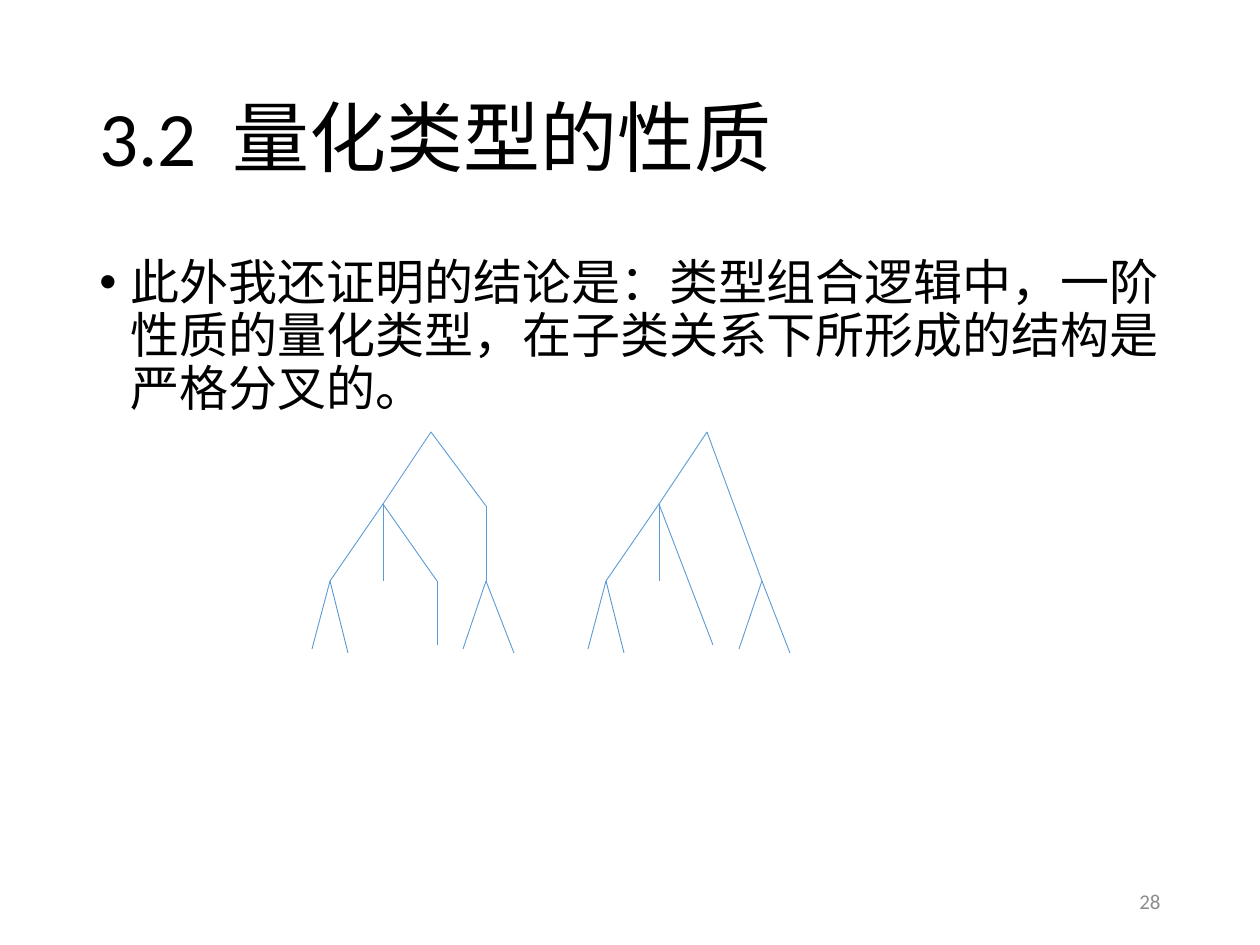
import pptx
import pptx.dml.color
import pptx.enum.shapes
import pptx.enum.text
import pptx.oxml.ns
import pptx.util
from lxml import etree

PX = 914400 / 126
FONT = "Calibri"

# Node positions shared by both trees, in px from the tree's top left corner
NODES = {
    "root": (119, 0),
    "branch": (71, 72), "elbow": (174, 74),
    "left": (18, 149), "middle": (71, 149), "inner": (125, 149), "right": (174, 149),
    "left leaf 1": (0, 217), "left leaf 2": (36, 221), "inner leaf": (125, 213),
    "right leaf 1": (151, 217), "right leaf 2": (202, 221),
}
SHARED_PATHS = [
    ("root", "branch"), ("branch", "left"), ("branch", "middle"),
    ("left", "left leaf 1"), ("left", "left leaf 2"),
    ("right", "right leaf 1"), ("right", "right leaf 2"),
]
BENT_PATHS = [("root", "elbow", "right"), ("branch", "inner", "inner leaf")]
STRAIGHT_PATHS = [(path[0], path[-1]) for path in BENT_PATHS]


def px(value):
    return pptx.util.Emu(round(value * PX))


def color(value):
    return pptx.dml.color.RGBColor.from_string(value)


def place(shape, box):
    shape.left, shape.top, shape.width, shape.height = map(px, box)


def style(paragraph, size, fill):
    paragraph.font.size = pptx.util.Pt(size)
    paragraph.font.name = FONT
    paragraph.font.color.rgb = color(fill)


def add_title(slide, box, number, heading):
    title = slide.shapes.title
    place(title, box)
    title.text_frame.word_wrap = True
    title.text_frame.vertical_anchor = pptx.enum.text.MSO_ANCHOR.MIDDLE
    line = title.text_frame.paragraphs[0]
    line.alignment = pptx.enum.text.PP_ALIGN.LEFT
    line.line_spacing = 0.9
    for text in (number, " ", heading):
        run = line.add_run()
        run.text = text
        if text == " ":
            run.font._element.set("spc", "1000")  # widens the gap after the number
    style(line, 44, "000000")


def add_text(slide, box, text):
    frame = slide.shapes.add_textbox(*map(px, box)).text_frame
    frame.word_wrap = True
    paragraph = frame.paragraphs[0]
    paragraph.text = text
    return frame, paragraph


def add_conclusion(slide, box, text):
    _, paragraph = add_text(slide, box, text)
    paragraph.line_spacing = 0.9
    properties = paragraph._p.get_or_add_pPr()
    indent = pptx.util.Inches(0.25)
    properties.set("marL", str(indent))
    properties.set("indent", str(-indent))
    for tag, key, value in (("a:buFont", "typeface", "Arial"), ("a:buChar", "char", "•")):
        etree.SubElement(properties, pptx.oxml.ns.qn(tag)).set(key, value)
    style(paragraph, 28, "000000")


def add_tree(slide, left, top, paths):
    tree = slide.shapes.add_group_shape()
    for path in paths:
        for start, end in zip(path, path[1:]):
            (x1, y1), (x2, y2) = NODES[start], NODES[end]
            edge = tree.shapes.add_connector(
                pptx.enum.shapes.MSO_CONNECTOR.STRAIGHT,
                px(left + x1), px(top + y1), px(left + x2), px(top + y2))
            edge.line.color.rgb = color("5B9BD5")
            edge.line.width = pptx.util.Pt(0.5)
            etree.SubElement(edge._element.spPr, pptx.oxml.ns.qn("a:effectLst"))


def add_page_number(slide, box, number):
    frame, paragraph = add_text(slide, box, number)
    frame.vertical_anchor = pptx.enum.text.MSO_ANCHOR.MIDDLE
    paragraph.alignment = pptx.enum.text.PP_ALIGN.RIGHT
    style(paragraph, 12, "8C8C8C")


def main():
    deck = pptx.Presentation()
    deck.slide_width, deck.slide_height = px(1260), px(945)
    slide = deck.slides.add_slide(deck.slide_layouts.get_by_name("Title Only"))
    add_title(slide, (87, 50, 1086, 183), "3.2", "量化类型的性质")
    add_conclusion(
        slide, (87, 252, 1086, 600),
        "此外我还证明的结论是：类型组合逻辑中，一阶性质的量化类型，"
        "在子类关系下所形成的结构是严格分叉的。")
    add_tree(slide, 312, 432, SHARED_PATHS + BENT_PATHS)
    add_tree(slide, 588, 432, SHARED_PATHS + STRAIGHT_PATHS)
    add_page_number(slide, (890, 876, 283, 50), "28")
    deck.save("out.pptx")


if __name__ == "__main__":
    main()
